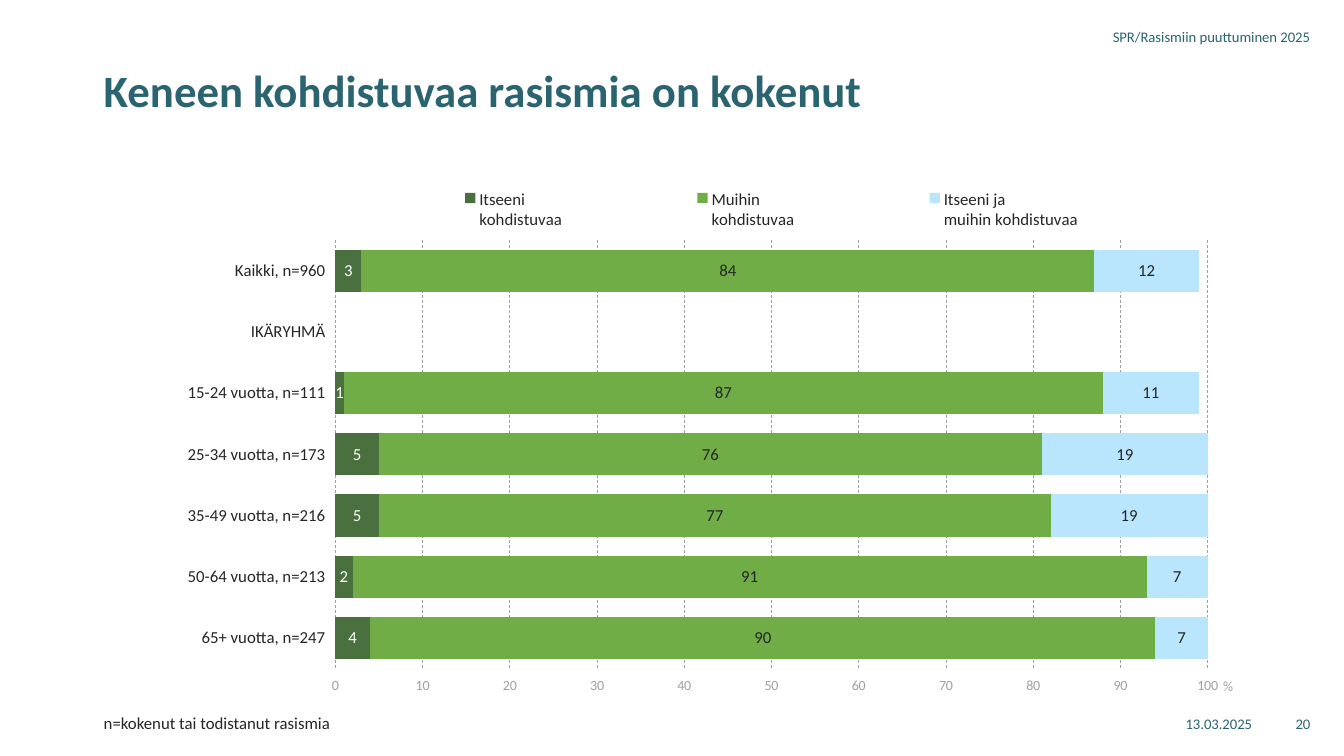
from lxml.etree import SubElement
from pptx import Presentation
from pptx.chart.data import CategoryChartData
from pptx.dml.color import RGBColor
from pptx.enum.chart import (XL_CHART_TYPE, XL_LABEL_POSITION, XL_LEGEND_POSITION,
                             XL_TICK_LABEL_POSITION, XL_TICK_MARK)
from pptx.enum.dml import MSO_LINE
from pptx.enum.text import MSO_ANCHOR, PP_ALIGN
from pptx.oxml.ns import qn
from pptx.util import Pt

TEAL, INK, GRAY = "2A6471", "262626", "A0A0A0"
GROUPS = ["Kaikki, n=960", "IKÄRYHMÄ", "15-24 vuotta, n=111", "25-34 vuotta, n=173",
          "35-49 vuotta, n=216", "50-64 vuotta, n=213", "65+ vuotta, n=247"]
TARGETS = [
    ("Itseeni \nkohdistuvaa", [3, None, 1, 5, 5, 2, 4], "4A7040", "FFFFFF"),
    ("Muihin \nkohdistuvaa", [84, None, 87, 76, 77, 91, 90], "70AD47", INK),
    ("Itseeni ja \nmuihin kohdistuvaa", [12, None, 11, 19, 19, 7, 7], "B9E6FD", INK),
]


def color(value):
    return RGBColor.from_string(value)


def style_font(font, size, value, bold=False):
    font.name = "Calibri"
    font.size = Pt(size)
    font.bold = bold
    font.color.rgb = color(value)


def add_text(page, text, place, size, value, bold=False, align=PP_ALIGN.LEFT,
             anchor=MSO_ANCHOR.TOP, spacing=None):
    box = page.shapes.add_textbox(*map(Pt, place))
    frame = box.text_frame
    frame.word_wrap = True
    frame.vertical_anchor = anchor
    frame.text = text
    para = frame.paragraphs[0]
    para.alignment = align
    para.line_spacing = spacing
    style_font(para.runs[0].font, size, value, bold)


def add_corner_text(page, text, place):
    add_text(page, text, place, 10.5, TEAL, align=PP_ALIGN.RIGHT, anchor=MSO_ANCHOR.MIDDLE)


def set_layout(element, **settings):
    for old in element.findall(qn("c:layout")):
        element.remove(old)
    layout = element.makeelement(qn("c:layout"))
    overlay = element.find(qn("c:overlay"))
    if overlay is None:
        element.insert(0, layout)
    else:
        overlay.addprevious(layout)
    manual = SubElement(layout, qn("c:manualLayout"))
    for name, value in settings.items():
        SubElement(manual, qn(f"c:{name}")).set("val", str(value))


def style_axis(axis, size, value):
    axis.major_tick_mark = axis.minor_tick_mark = XL_TICK_MARK.NONE
    axis.format.line.fill.background()
    style_font(axis.tick_labels.font, size, value)


def style_category_axis(axis):
    style_axis(axis, 12, INK)
    axis.reverse_order = True
    axis.tick_label_position = XL_TICK_LABEL_POSITION.LOW
    axis.has_major_gridlines = False


def style_value_axis(axis):
    style_axis(axis, 10, GRAY)
    axis.minimum_scale, axis.maximum_scale, axis.major_unit = 0, 100.01, 10
    axis.tick_label_position = XL_TICK_LABEL_POSITION.HIGH
    axis.tick_labels.number_format = "General"
    axis.tick_labels.number_format_is_linked = False
    axis.has_major_gridlines = True
    grid = axis.major_gridlines.format.line
    grid.width = Pt(0.5)
    grid.color.rgb = color(GRAY)
    grid.dash_style = MSO_LINE.DASH
    title = axis.axis_title
    title.text_frame.text = "%"
    style_font(title.text_frame.paragraphs[0].runs[0].font, 10, GRAY)
    set_layout(title._element, xMode="edge", yMode="edge", x=0.975, y=0.946)


def style_series(series, fill, label):
    series.format.fill.solid()
    series.format.fill.fore_color.rgb = color(fill)
    labels = series.data_labels
    labels.show_value = True
    labels.position = XL_LABEL_POSITION.CENTER
    labels.number_format = "#,##0"
    labels.number_format_is_linked = False
    style_font(labels.font, 12, label)


def add_legend(chart):
    chart.has_legend = True
    legend = chart.legend
    legend.position = XL_LEGEND_POSITION.TOP
    legend.include_in_layout = False
    style_font(legend.font, 12, INK)
    set_layout(legend._element, xMode="edge", yMode="edge", x=0.209, y=0.02, w=0.755, h=0.096)


def add_racism_chart(page, place):
    data = CategoryChartData()
    data.categories = GROUPS
    for name, values, _, _ in TARGETS:
        data.add_series(name, values)
    chart = page.shapes.add_chart(XL_CHART_TYPE.BAR_STACKED, *map(Pt, place), data).chart
    style_font(chart.font, 12, "3A4A4E")
    chart.has_title = False
    plot = chart.plots[0]
    plot.gap_width, plot.overlap, plot.vary_by_categories = 45, 100, False
    for series, (_, _, fill, label) in zip(plot.series, TARGETS):
        style_series(series, fill, label)
    style_category_axis(chart.category_axis)
    style_value_axis(chart.value_axis)
    add_legend(chart)
    set_layout(chart._chartSpace.chart.plotArea, layoutTarget="inner", xMode="edge",
               yMode="edge", x=0.209, y=0.126, w=0.755, h=0.808)


def main():
    deck = Presentation()
    deck.slide_width, deck.slide_height = Pt(960), Pt(540)
    page = deck.slides.add_slide(deck.slide_layouts[6])
    add_racism_chart(page, (67, 124, 825.5, 378.5))
    add_corner_text(page, "13.03.2025", (685.5, 502.5, 216, 29))
    add_corner_text(page, "SPR/Rasismiin puuttuminen 2025", (619, 12, 324, 29))
    add_corner_text(page, "20", (911.5, 502.5, 31.5, 29))
    add_text(page, "Keneen kohdistuvaa rasismia on kokenut", (67, 44.5, 826, 75.5),
             32, TEAL, bold=True, spacing=Pt(35))
    add_text(page, "n=kokenut tai todistanut rasismia", (67, 507, 661, 20),
             12, INK, spacing=0.9)
    deck.save("out.pptx")


if __name__ == "__main__":
    main()
